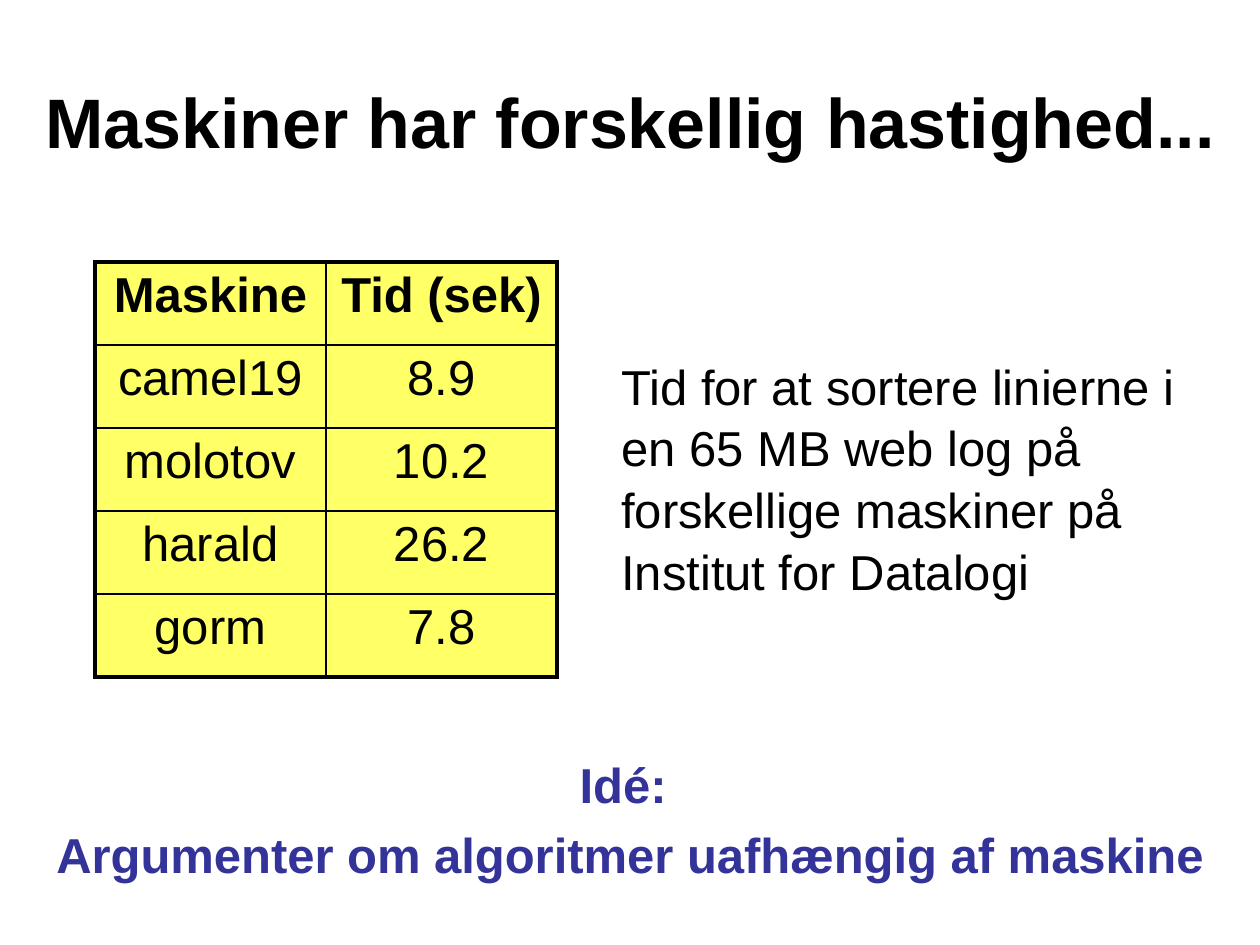
from pptx import Presentation
from pptx.dml.color import RGBColor
from pptx.enum.text import MSO_ANCHOR, PP_ALIGN
from pptx.oxml import parse_xml
from pptx.oxml.ns import nsdecls
from pptx.util import Pt

PX = 914400 // 126
CENTER, LEFT = PP_ALIGN.CENTER, PP_ALIGN.LEFT
TOP, MIDDLE = MSO_ANCHOR.TOP, MSO_ANCHOR.MIDDLE
BLACK, INDIGO, YELLOW = "000000", "333399", "FFFF66"


def write(frame, lines, size=28, color=BLACK, bold=False, align=CENTER, gap=0):
    frame.word_wrap = True
    for i, line in enumerate(lines):
        paragraph = frame.paragraphs[0] if i == 0 else frame.add_paragraph()
        paragraph.alignment = align
        paragraph.space_before = Pt(gap)
        run = paragraph.add_run()
        run.text = line
        run.font.name = "Arial"
        run.font.size = Pt(size)
        run.font.bold = bold
        run.font.color.rgb = RGBColor.from_string(color)


def add_text(slide, left, top, width, height, anchor):
    box = slide.shapes.add_textbox(left * PX, top * PX, width * PX, height * PX)
    box.text_frame.vertical_anchor = anchor
    return box.text_frame


prs = Presentation()
prs.slide_width, prs.slide_height = 1260 * PX, 945 * PX
slide = prs.slides.add_slide(prs.slide_layouts[6])

title = add_text(slide, 0, 42, 1260, 157, MIDDLE)
write(title, ["Maskiner har forskellig hastighed..."], size=40, bold=True)

explanation = add_text(slide, 609, 347, 588, 252, TOP)
write(explanation, ["Tid for at sortere linierne i en 65 MB web log på "
                    "forskellige maskiner på Institut for Datalogi"], align=LEFT)
explanation.paragraphs[0].line_spacing = 1.05

timings = [
    ("Maskine", "Tid (sek)"),
    ("camel19", "8.9"),
    ("molotov", "10.2"),
    ("harald", "26.2"),
    ("gorm", "7.8"),
]
last_row, last_col = len(timings) - 1, 1
table = slide.shapes.add_table(len(timings), 2, 95 * PX, 262 * PX, 462 * PX, 415 * PX).table
for column in table.columns:
    column.width = 231 * PX
for r, timing in enumerate(timings):
    table.rows[r].height = 83 * PX
    for c, value in enumerate(timing):
        cell = table.cell(r, c)
        write(cell.text_frame, [value], bold=r == 0)
        outer_edges = {"L": c == 0, "R": c == last_col, "T": r == 0, "B": r == last_row}
        for side, outer in outer_edges.items():
            width = Pt(2.25 if outer else 1)
            cell._tc.get_or_add_tcPr().append(parse_xml(
                f'<a:ln{side} {nsdecls("a")} w="{width}"><a:solidFill>'
                f'<a:srgbClr val="{BLACK}"/></a:solidFill></a:ln{side}>'))
        cell.fill.solid()
        cell.fill.fore_color.rgb = RGBColor.from_string(YELLOW)

idea = add_text(slide, 0, 756, 1260, 126, MIDDLE)
write(idea, ["Idé: ", "Argumenter om algoritmer uafhængig af maskine"],
      color=INDIGO, bold=True, gap=6.5)

prs.save("out.pptx")
